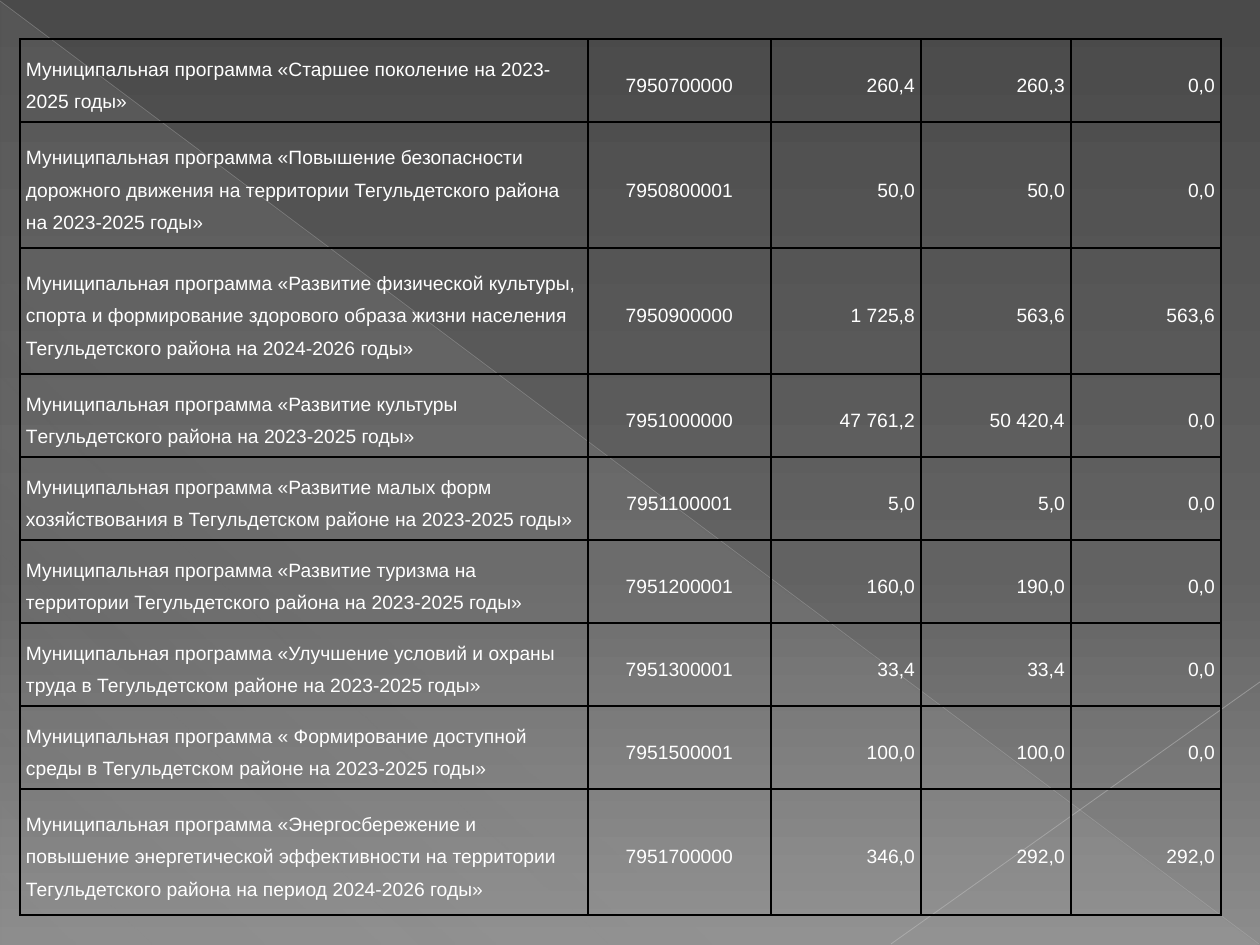
from dataclasses import dataclass

from lxml import etree
from pptx import Presentation, util as u
from pptx.dml.color import RGBColor
from pptx.enum import shapes, text
from pptx.oxml.ns import qn

PX = u.Inches(1) // 126


@dataclass(frozen=True)
class Theme:
    font: str = "Arial"
    size: float = 11
    ink: str = "FFFFFF"
    border: str = "000000"
    border_pt: float = 1
    spacing: float = 1.5
    inset: int = 6
    # gradient stops: position %, colour, opacity %
    backdrop: tuple = ((0, "4A4A4A", 100), (60, "626262", 100), (100, "8C8C8C", 100))
    sheen: tuple = ((0, "D2D2D2", 10), (70, "D2D2D2", 8), (100, "D2D2D2", 1))


class Deck:
    """Holds the theme and the slide being drawn."""

    def __init__(self, theme, width, height):
        self.theme = theme
        self.prs = Presentation()
        self.prs.slide_width, self.prs.slide_height = width * PX, height * PX
        self.s = self.prs.slides.add_slide(self.prs.slide_layouts[6])

    def color(self, parent, rgb, opacity=100):
        clr = etree.SubElement(parent, qn("a:srgbClr"), val=rgb)
        if opacity < 100:
            etree.SubElement(clr, qn("a:alpha"), val=str(opacity * 1000))

    def gradient(self, fill, holder, stops, angle):
        """Give the fill inside holder any number of stops, angle clockwise."""
        fill.gradient()
        grad = holder.find(".//" + qn("a:gradFill"))
        grad.find(qn("a:lin")).set("ang", str(angle * 60000))
        stop_list = grad.find(qn("a:gsLst"))
        stop_list.clear()
        for pos, rgb, opacity in stops:
            stop = etree.SubElement(stop_list, qn("a:gs"), pos=str(pos * 1000))
            self.color(stop, rgb, opacity)

    def background(self, stops, angle):
        self.gradient(self.s.background.fill, self.s.element, stops, angle)

    def triangle(self, x, y, w, h, stops, angle):
        sp = self.s.shapes.add_shape(shapes.MSO_SHAPE.RIGHT_TRIANGLE,
                                     x * PX, y * PX, w * PX, h * PX)
        sp.shadow.inherit = False
        sp.line.fill.background()
        self.gradient(sp.fill, sp.element.spPr, stops, angle)

    def line(self, x1, y1, x2, y2, rgb, width, opacity):
        cxn = self.s.shapes.add_connector(shapes.MSO_CONNECTOR.STRAIGHT,
                                          x1 * PX, y1 * PX, x2 * PX, y2 * PX)
        cxn.line.width = u.Pt(width)
        cxn.line.fill.solid()
        fill = cxn.line._ln.find(qn("a:solidFill"))
        fill.clear()
        self.color(fill, rgb, opacity)
        etree.SubElement(cxn.element.spPr, qn("a:effectLst"))

    def table(self, x, y, widths, heights, rows, aligns):
        frame = self.s.shapes.add_table(len(rows), len(widths), x * PX, y * PX,
                                        sum(widths) * PX, sum(heights) * PX)
        table = frame.table
        table.first_row = table.horz_banding = False
        for column, width in zip(table.columns, widths):
            column.width = width * PX
        for row, height, values in zip(table.rows, heights, rows):
            row.height = height * PX
            for cell, value, align in zip(row.cells, values, aligns):
                self.cell(cell, value, align)

    def cell(self, cell, value, align):
        t = self.theme
        layout = dict(margin_left=t.inset * PX, margin_right=t.inset * PX, margin_top=0,
                      margin_bottom=0, vertical_anchor=text.MSO_ANCHOR.MIDDLE)
        for name, setting in layout.items():
            setattr(cell, name, setting)
        p = cell.text_frame.paragraphs[0]
        p.alignment, p.line_spacing = align, t.spacing
        r = p.add_run()
        r.text = value
        for name, setting in dict(name=t.font, size=u.Pt(t.size)).items():
            setattr(r.font, name, setting)
        r.font.color.rgb = RGBColor.from_string(t.ink)
        tc_pr = cell._tc.get_or_add_tcPr()
        for side in ("a:lnL", "a:lnR", "a:lnT", "a:lnB"):
            ln = etree.SubElement(tc_pr, qn(side), w=str(u.Pt(t.border_pt)))
            self.color(etree.SubElement(ln, qn("a:solidFill")), t.border)
        cell.fill.background()


PROGRAMS = [
    ("«Старшее поколение на 2023-2025 годы»", "7950700000", "260,4", "260,3", "0,0"),
    ("«Повышение безопасности дорожного движения на территории Тегульдетского района "
     "на 2023-2025 годы»", "7950800001", "50,0", "50,0", "0,0"),
    ("«Развитие физической культуры, спорта и формирование здорового образа жизни населения "
     "Тегульдетского района на 2024-2026 годы»", "7950900000", "1 725,8", "563,6", "563,6"),
    ("«Развитие культуры Tегульдетского района на 2023-2025 годы»",
     "7951000000", "47 761,2", "50 420,4", "0,0"),
    ("«Развитие малых форм хозяйствования в Тегульдетском районе на 2023-2025 годы»",
     "7951100001", "5,0", "5,0", "0,0"),
    ("«Развитие туризма на территории Тегульдетского района на 2023-2025 годы»",
     "7951200001", "160,0", "190,0", "0,0"),
    ("«Улучшение условий и охраны труда в Тегульдетском районе на 2023-2025 годы»",
     "7951300001", "33,4", "33,4", "0,0"),
    ("« Формирование доступной среды в Тегульдетском районе на 2023-2025 годы»",
     "7951500001", "100,0", "100,0", "0,0"),
    ("«Энергосбережение и повышение энергетической эффективности на территории "
     "Тегульдетского района на период 2024-2026 годы»",
     "7951700000", "346,0", "292,0", "292,0"),
]
TWO_LINES, THREE_LINES = 83, 126
TALL_ROWS = (1, 2, 8)


def main():
    theme = Theme()
    deck = Deck(theme, 1260, 945)
    deck.background(theme.backdrop, 90)
    deck.triangle(1, 2, 1258, 943, theme.sheen, 133)
    deck.line(0, 1, 1259, 944, "BFBFBF", 0.39, 35)
    deck.line(1260, 682, 891, 944, "C6C6C6", 0.47, 45)

    rows = [(f"Муниципальная программа {name}", *values) for name, *values in PROGRAMS]
    heights = [THREE_LINES if i in TALL_ROWS else TWO_LINES for i in range(len(rows))]
    align = text.PP_ALIGN
    deck.table(20, 39, [568, 183] + [150] * 3, heights, rows,
               [align.LEFT, align.CENTER] + [align.RIGHT] * 3)
    deck.prs.save("out.pptx")


if __name__ == "__main__":
    main()
